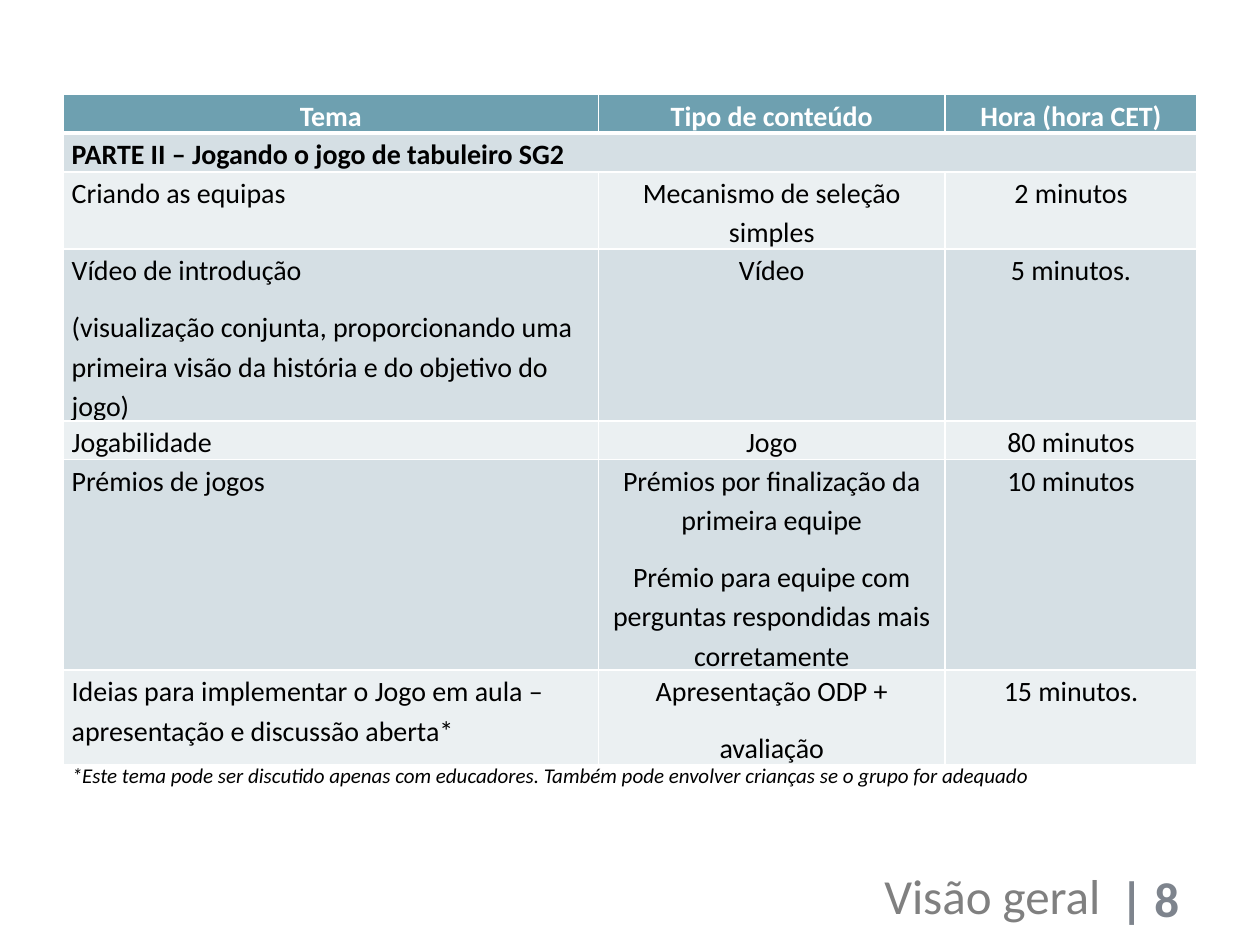
"""Build the overview slide with the schedule of the game session, part II."""
import pptx
import pptx.dml.color
import pptx.enum.text
import pptx.oxml
import pptx.oxml.ns
import pptx.util

Pt = pptx.util.Pt
ALIGN = pptx.enum.text.PP_ALIGN
COLORS = {
    "header": "6EA0B0", "dark_band": "D5DFE4", "light_band": "EBF0F2",
    "white": "FFFFFF", "black": "000000", "title": "808080", "number": "7E848D",
}
ROWS = [
    ("Tema", "Tipo de conteúdo", "Hora (hora CET)"),
    ("PARTE II – Jogando o jogo de tabuleiro SG2", "", ""),
    ("Criando as equipas", "Mecanismo de seleção simples", "2 minutos"),
    ("Vídeo de introdução\n(visualização conjunta, proporcionando uma primeira visão "
     "da história e do objetivo do jogo)", "Vídeo", "5 minutos."),
    ("Jogabilidade", "Jogo", "80 minutos"),
    ("Prémios de jogos", "Prémios por finalização da primeira equipe\n"
     "Prémio para equipe com perguntas respondidas mais corretamente", "10 minutos"),
    ("Ideias para implementar o Jogo em aula – apresentação e discussão aberta*",
     "Apresentação ODP +\navaliação", "15 minutos."),
]
ROW_HEIGHTS = [22, 22, 44, 98, 22, 120, 54]
COLUMN_WIDTHS = [306, 198, 144]


def write_text(text_frame, text, color, paragraph_format, font_format):
    text_frame.text = text
    for paragraph in text_frame.paragraphs:
        for name, value in paragraph_format.items():
            setattr(paragraph, name, value)
        for run in paragraph.runs:
            run.font.name = "Calibri"
            run.font.color.rgb = pptx.dml.color.RGBColor.from_string(COLORS[color])
            for name, value in font_format.items():
                setattr(run.font, name, value)


def add_border(cell, side, width):
    cell._tc.get_or_add_tcPr().append(pptx.oxml.parse_xml(
        f'<a:{side} {pptx.oxml.ns.nsdecls("a")} w="{Pt(width)}"><a:solidFill>'
        f'<a:srgbClr val="{COLORS["white"]}"/></a:solidFill></a:{side}>'))


presentation = pptx.Presentation()
presentation.slide_width, presentation.slide_height = Pt(720), Pt(540)
slide = presentation.slides.add_slide(presentation.slide_layouts[5])

title = slide.shapes.title
title_place = {"left": Pt(24), "top": Pt(491), "width": Pt(612), "height": Pt(41)}
for name, value in title_place.items():
    setattr(title, name, value)
title.text_frame.auto_size = pptx.enum.text.MSO_AUTO_SIZE.NONE
write_text(title.text_frame, "Visão geral", "title",
           {"alignment": ALIGN.RIGHT}, {"size": Pt(28)})

page_number = slide.shapes.add_textbox(Pt(633), Pt(492.5), Pt(81), Pt(41))
page_number.text_frame.word_wrap = False
write_text(page_number.text_frame, "| 8", "number",
           {"alignment": ALIGN.LEFT}, {"size": Pt(28), "bold": True})

table = slide.shapes.add_table(
    len(ROWS), len(COLUMN_WIDTHS), Pt(36), Pt(54),
    Pt(sum(COLUMN_WIDTHS)), Pt(sum(ROW_HEIGHTS))).table
for column, width in zip(table.columns, COLUMN_WIDTHS):
    column.width = Pt(width)
for row, height in zip(table.rows, ROW_HEIGHTS):
    row.height = Pt(height)
table.cell(1, 0).merge(table.cell(1, 2))

cell_format = {"margin_left": Pt(5), "margin_right": Pt(5), "margin_top": 0, "margin_bottom": 0}
for row_index, texts in enumerate(ROWS):
    band = "header" if row_index == 0 else ("light_band", "dark_band")[row_index % 2]
    text_color = "white" if row_index == 0 else "black"
    border_widths = {"lnL": 1, "lnR": 1, "lnT": 3 if row_index == 1 else 1,
                     "lnB": 3 if row_index == 0 else 1}
    for column_index, text in enumerate(texts):
        cell = table.cell(row_index, column_index)
        for side, width in border_widths.items():
            add_border(cell, side, width)
        cell.fill.solid()
        cell.fill.fore_color.rgb = pptx.dml.color.RGBColor.from_string(COLORS[band])
        if cell.is_spanned:
            continue
        for name, value in cell_format.items():
            setattr(cell, name, value)
        centered = row_index == 0 or column_index > 0
        write_text(cell.text_frame, text, text_color,
                   {"alignment": ALIGN.CENTER if centered else ALIGN.LEFT,
                    "line_spacing": 1.15, "space_after": Pt(10)},
                   {"size": Pt(16), "bold": row_index < 2})

footnote = slide.shapes.add_textbox(Pt(34), Pt(432), Pt(648), Pt(22))
footnote.text_frame.word_wrap = True
write_text(footnote.text_frame,
           "*Este tema pode ser discutido apenas com educadores. "
           "Também pode envolver crianças se o grupo for adequado",
           "black", {"alignment": ALIGN.LEFT}, {"size": Pt(12), "italic": True})

presentation.save("out.pptx")
